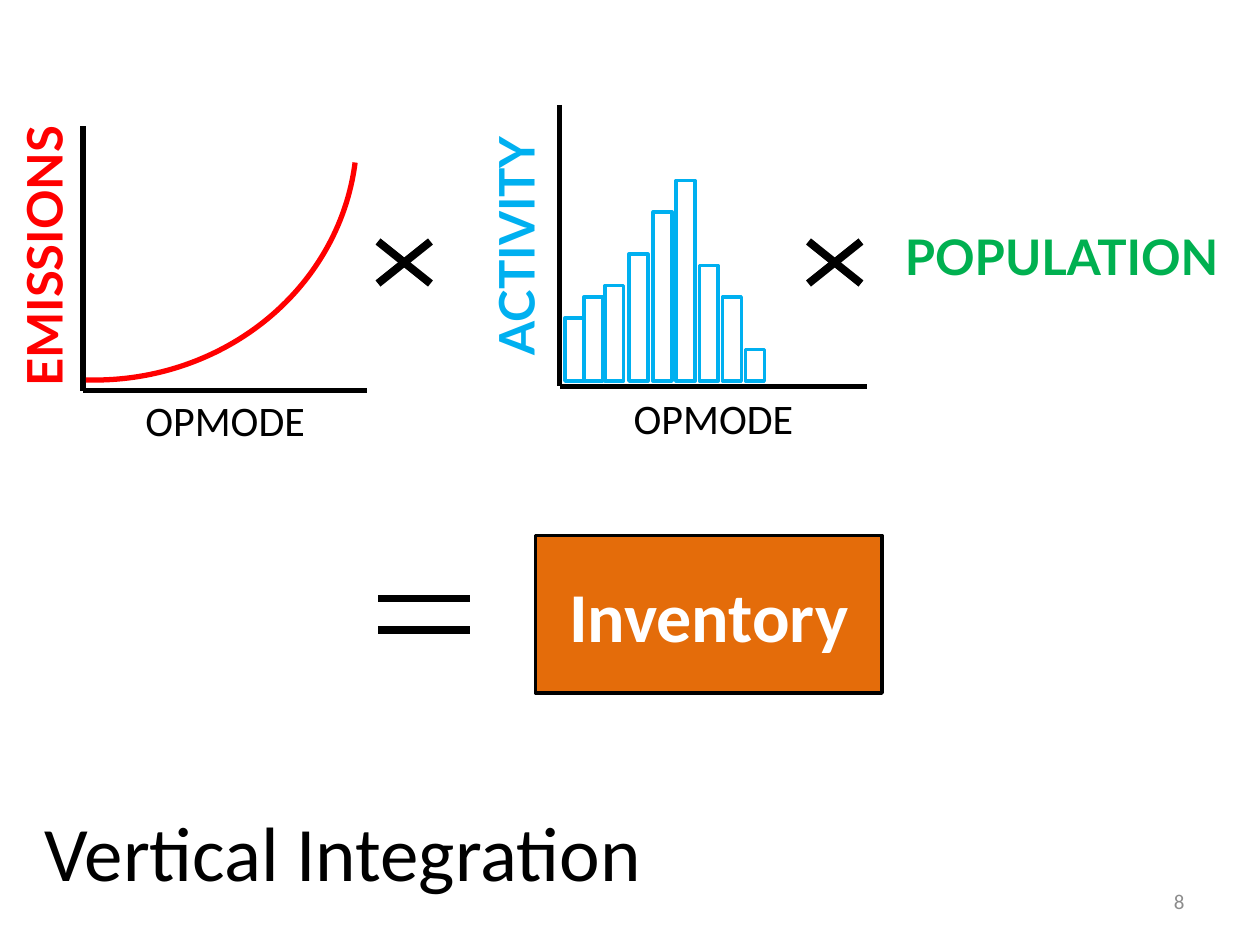
from lxml import etree
from pptx import Presentation
from pptx import util as u
from pptx.dml.color import RGBColor
from pptx.enum import shapes, text
from pptx.oxml import ns

COLUMNS, ROWS = 120, 90
SLIDE_W, SLIDE_H = u.Inches(10), u.Inches(7.5)
COLORS = {
    "black": "000000",
    "white": "FFFFFF",
    "gray": "8C8C8C",
    "emissions": "FF0000",
    "activity": "00B0F0",
    "population": "00B050",
    "inventory": "E46C0A",
}
BARS = [(53.8, 6), (55.6, 8), (57.6, 9.1), (59.9, 12.1), (62.2, 16.1),
        (64.4, 19.1), (66.6, 11), (68.8, 8), (71, 3)]
BAR_BASE, BAR_WIDTH = 36.3, 1.8
LEFT, CENTER, RIGHT = text.PP_ALIGN.LEFT, text.PP_ALIGN.CENTER, text.PP_ALIGN.RIGHT
TOP, MIDDLE = text.MSO_ANCHOR.TOP, text.MSO_ANCHOR.MIDDLE


def color(name):
    return RGBColor.from_string(COLORS[name])


def grid(*cells):
    units = (SLIDE_W / COLUMNS, SLIDE_H / ROWS)
    return [round(cell * units[i % 2]) for i, cell in enumerate(cells)]


def write(sp, words, size, name, font="Calibri", bold=False, align=CENTER, anchor=TOP):
    tf = sp.text_frame
    tf.word_wrap = True
    tf.vertical_anchor = anchor
    p = tf.paragraphs[0]
    p.text = words
    p.alignment = align
    p.font.size = u.Pt(size)
    p.font.name = font
    p.font.bold = bold
    p.font.color.rgb = color(name)


def add_label(parent, box, words, size, name, rotation=0, **style):
    sp = parent.add_textbox(*grid(*box))
    sp.rotation = rotation
    write(sp, words, size, name, **style)


def add_line(parent, start, end, width):
    sp = parent.add_connector(shapes.MSO_CONNECTOR.STRAIGHT, *grid(*start, *end))
    sp.line.color.rgb = color("black")
    sp.line.width = u.Pt(width)
    etree.SubElement(sp._element.spPr, ns.qn("a:effectLst"))


def add_outline(parent, kind, box, name, width, fill=None):
    sp = parent.add_shape(kind, *grid(*box))
    sp.shadow.inherit = False
    sp.line.color.rgb = color(name)
    sp.line.width = u.Pt(width)
    if fill:
        sp.fill.solid()
        sp.fill.fore_color.rgb = color(fill)
    else:
        sp.fill.background()
    return sp


def add_times(slide, left, right):
    group = slide.shapes.add_group_shape().shapes
    add_line(group, (left, 23), (right, 27), 4.5)
    add_line(group, (left, 27), (right, 23), 4.5)


def add_equals(slide):
    group = slide.shapes.add_group_shape().shapes
    for row in (57, 60):
        add_line(group, (36, row), (44.8, row), 4.5)


def add_axes(slide, left, top, right, base, label_top):
    group = slide.shapes.add_group_shape().shapes
    add_line(group, (left, top), (left, base), 3)
    add_line(group, (left, base), (right, base), 3)
    add_label(group, (left, label_top, right - left, 6), "OPMODE", 24, "black")
    return group


def add_emissions(slide):
    group = add_axes(slide, 7.9, 12, 35, 37.2, 37)
    add_label(group, (-12.7, 21, 33.6, 6.8), "EMISSIONS", 28, "emissions",
              rotation=270, font="Lato", bold=True)
    arc = add_outline(group, shapes.MSO_SHAPE.ARC, (-16, -10.8, 50, 47), "emissions", 3)
    arc.adjustments[0] = 3.84
    arc.adjustments[1] = 55.19


def add_activity(slide):
    group = add_axes(slide, 53.3, 10, 82.6, 36.8, 36.8)
    add_label(group, (35.6, 20, 26.9, 6.8), "ACTIVITY", 28, "activity",
              rotation=270, font="Lato", bold=True)
    for left, height in BARS:
        add_outline(group, shapes.MSO_SHAPE.RECTANGLE,
                    (left, BAR_BASE - height, BAR_WIDTH, height), "activity", 2)


def main():
    prs = Presentation()
    prs.slide_width, prs.slide_height = SLIDE_W, SLIDE_H
    slide = prs.slides.add_slide(prs.slide_layouts[6])
    add_label(slide.shapes, (3.1, 73.5, 108, 15), "Vertical Integration", 44, "black",
              align=LEFT, anchor=MIDDLE)
    add_label(slide.shapes, (86, 83.4, 28, 4.8), "8", 12, "gray", align=RIGHT, anchor=MIDDLE)
    add_times(slide, 36, 41)
    add_times(slide, 77, 82)
    add_emissions(slide)
    add_activity(slide)
    add_label(slide.shapes, (85, 21, 35, 6.8), "POPULATION", 28, "population",
              font="Lato", bold=True, align=LEFT)
    add_equals(slide)
    inventory = add_outline(slide.shapes, shapes.MSO_SHAPE.RECTANGLE, (51, 51, 33, 15),
                            "black", 2, fill="inventory")
    write(inventory, "Inventory", 40, "white", bold=True, anchor=MIDDLE)
    prs.save("out.pptx")


if __name__ == "__main__":
    main()
